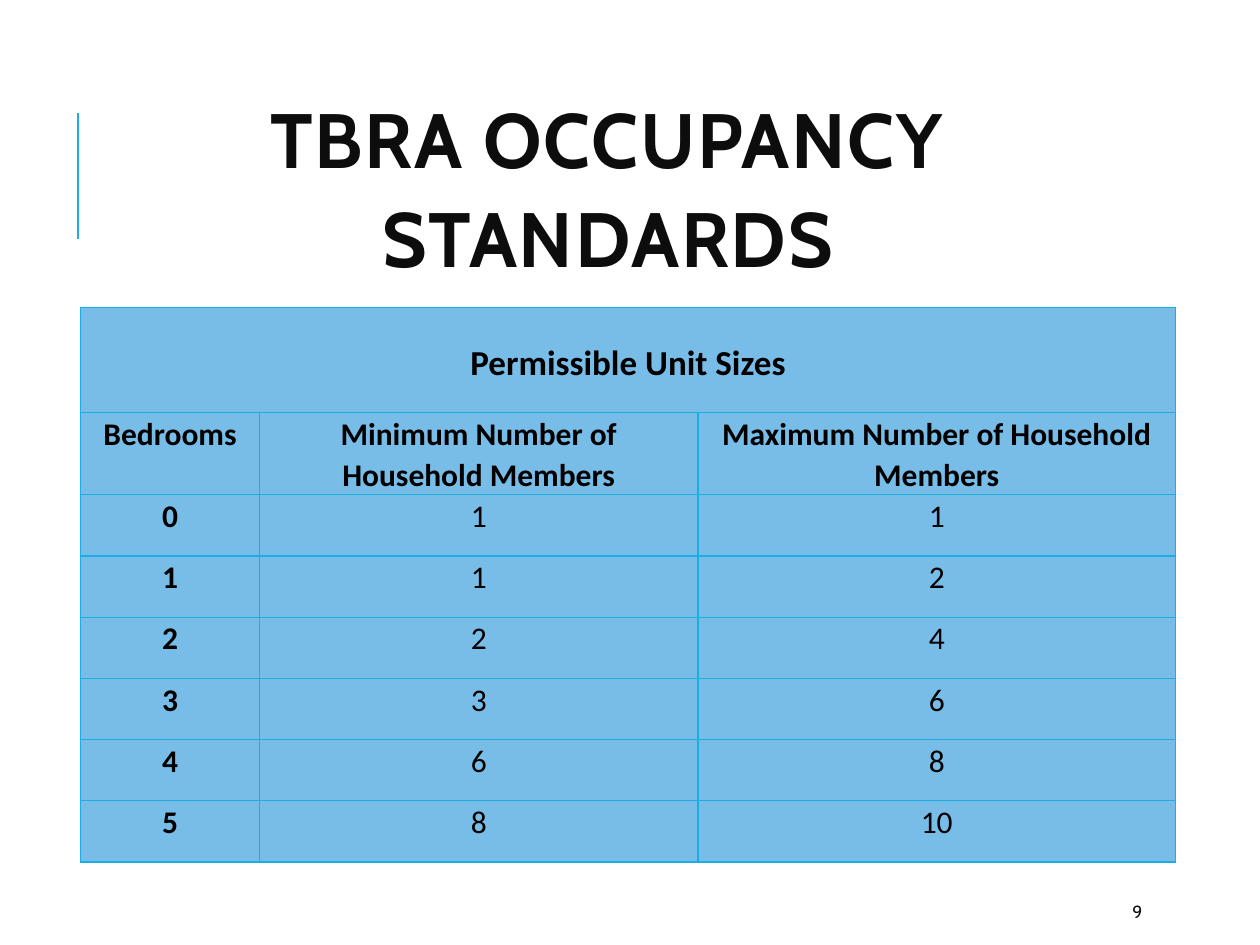
from pptx import Presentation
from pptx.dml.color import RGBColor
from pptx.enum.shapes import MSO_CONNECTOR as Connector
from pptx.enum.text import MSO_ANCHOR as Anchor, PP_ALIGN as Align
from pptx.oxml import parse_xml
from pptx.oxml.ns import nsdecls
from pptx.util import Pt

ACCENT, CELL_FILL, INK, BLACK = "1CADE4", "78BDE8", "0D0D0D", "000000"
HEADING_FONT, TABLE_FONT = "Cabin", "Calibri"


def color(value):
    return RGBColor.from_string(value)


class SlideBuilder:
    line_spacing = 1.07
    border_width = 0.75
    cell_inset = 5.76

    def __init__(self, slide):
        self.slide = slide

    def style(self, frame, font, size, ink, bold=False, align=Align.CENTER, tracking=0):
        for para in frame.paragraphs:
            para.alignment = align
            para.line_spacing = self.line_spacing
            for span in para.runs:
                span.font.name, span.font.size, span.font.bold = font, Pt(size), bold
                span.font.color.rgb = color(ink)
                if tracking:
                    span.font._element.set("spc", str(tracking * 100))

    def text(self, words, left, top, width, height, size, **options):
        box = self.slide.shapes.add_textbox(Pt(left), Pt(top), Pt(width), Pt(height))
        frame = box.text_frame
        frame.word_wrap = True
        frame.vertical_anchor = Anchor.MIDDLE
        frame.text = words
        self.style(frame, HEADING_FONT, size, INK, **options)

    def line(self, x1, y1, x2, y2, width):
        rule = self.slide.shapes.add_connector(
            Connector.STRAIGHT, Pt(x1), Pt(y1), Pt(x2), Pt(y2))
        rule.line.color.rgb = color(ACCENT)
        rule.line.width = Pt(width)
        rule._element.spPr.append(parse_xml(f"<a:effectLst {nsdecls('a')}/>"))

    def table(self, left, top, widths, heights):
        grid = self.slide.shapes.add_table(
            len(heights), len(widths), Pt(left), Pt(top),
            Pt(sum(widths)), Pt(sum(heights))).table
        for column, width in zip(grid.columns, widths):
            column.width = Pt(width)
        for row, height in zip(grid.rows, heights):
            row.height = Pt(height)
        for cell in grid.iter_cells():
            self.borders(cell)
            cell.fill.solid()
            cell.fill.fore_color.rgb = color(CELL_FILL)
            cell.margin_left = cell.margin_right = Pt(self.cell_inset)
            cell.margin_top = cell.margin_bottom = 0
        return grid

    def borders(self, cell):
        properties = cell._tc.get_or_add_tcPr()
        for side in ("lnL", "lnR", "lnT", "lnB"):
            properties.append(parse_xml(
                f'<a:{side} {nsdecls("a")} w="{Pt(self.border_width)}"><a:solidFill>'
                f'<a:srgbClr val="{ACCENT}"/></a:solidFill></a:{side}>'))

    def cell_text(self, cell, words, size, bold):
        cell.text_frame.text = words
        self.style(cell.text_frame, TABLE_FONT, size, BLACK, bold)


def main():
    deck = Presentation()
    deck.slide_width, deck.slide_height = Pt(720), Pt(540)
    page = SlideBuilder(deck.slides.add_slide(deck.slide_layouts[6]))

    # Accent rule beside the title
    page.line(44.64, 136.8, 44.64, 64.8, 1.5)

    # Occupancy table
    headers = ("Bedrooms", "Minimum Number of Household Members",
               "Maximum Number of Household Members")
    limits = [(0, 1, 1), (1, 1, 2), (2, 2, 4), (3, 3, 6), (4, 6, 8), (5, 8, 10)]
    grid = page.table(46.08, 175.68, (102.24, 250.56, 272.88),
                      [60, 47] + [35] * len(limits))
    banner = grid.cell(0, 0)
    banner.merge(grid.cell(0, 2))
    banner.margin_top = Pt(18)
    page.cell_text(banner, "Permissible Unit Sizes", 20, True)
    for row, values in enumerate([headers, *limits], start=1):
        for column, value in enumerate(values):
            page.cell_text(grid.cell(row, column), str(value), 18,
                           bold=row == 1 or column == 0)

    # Slide number and title
    page.text("9", 640, 509.76, 57.6, 21.6, 10, align=Align.LEFT)
    page.text("TBRA OCCUPANCY STANDARDS", 60.48, 46.08, 573.84, 118.08, 44,
              bold=True, tracking=1)

    deck.save("out.pptx")


if __name__ == "__main__":
    main()
